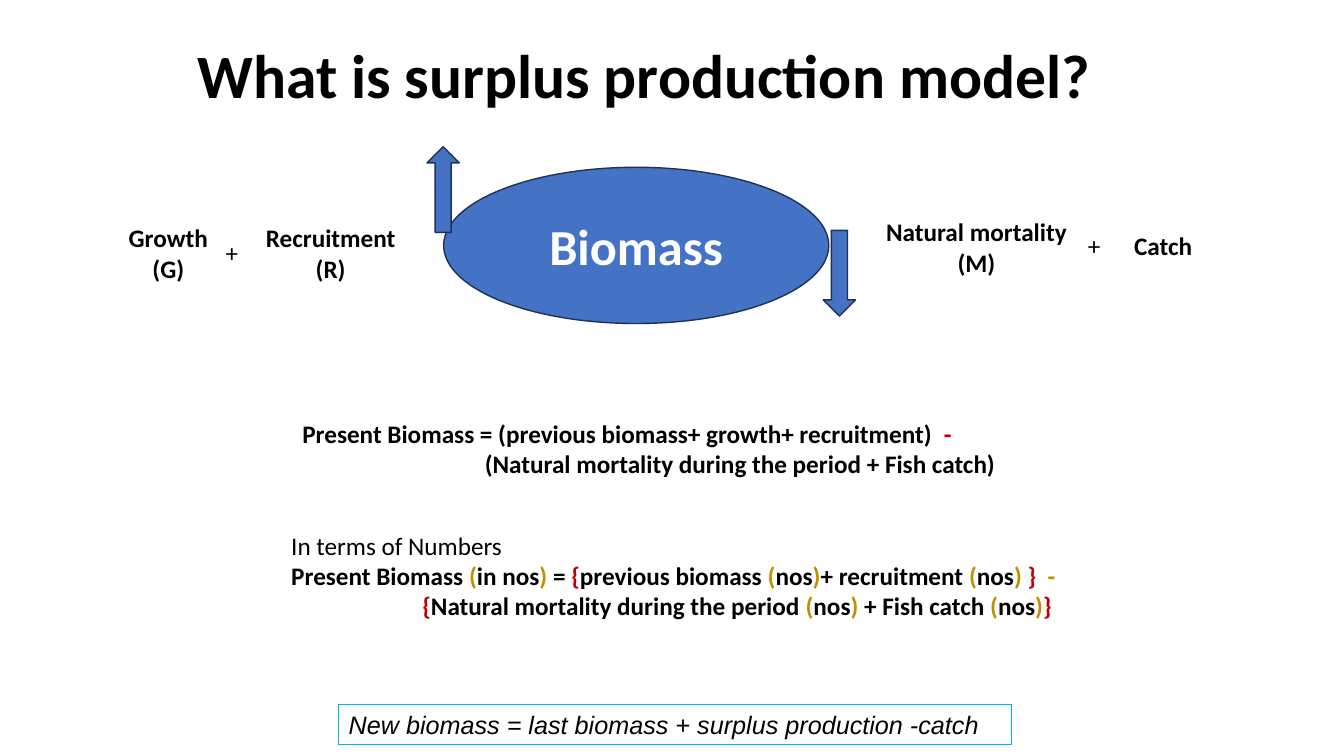
from itertools import groupby

from pptx import Presentation
from pptx.dml.color import RGBColor
from pptx.enum.shapes import MSO_SHAPE
from pptx.enum.text import MSO_ANCHOR, PP_ALIGN
from pptx.util import Inches, Pt

LEFT, CENTER = PP_ALIGN.LEFT, PP_ALIGN.CENTER
TOP, MIDDLE = MSO_ANCHOR.TOP, MSO_ANCHOR.MIDDLE
OVAL, ARROW, BOX = MSO_SHAPE.OVAL, MSO_SHAPE.RIGHT_ARROW, MSO_SHAPE.RECTANGLE

COLORS = {
    "ink": "000000",
    "white": "FFFFFF",
    "blue": "4472C4",
    "navy": "1E3256",
    "sky": "00B0F0",
    "red": "C00000",
    "gold": "BF9000",
}
MINUS_COLORS = {"-": "red"}
BRACKET_COLORS = {"{": "red", "}": "red", "(": "gold", ")": "gold", "-": "gold"}


def rgb(name):
    """Return the named palette colour."""
    return RGBColor.from_string(COLORS[name])


def write_line(paragraph, text, size=18, bold=True, italic=False, color="ink",
               font="Calibri", align=LEFT, symbol_colors=None):
    """Write one paragraph, giving listed symbols their own colour."""
    paragraph.alignment = align
    paragraph.font.name = font
    paragraph.font.size = Pt(size)
    paragraph.font.bold = bold
    paragraph.font.italic = italic
    paragraph.font.color.rgb = rgb(color)
    symbols = symbol_colors or {}
    for symbol_color, letters in groupby(text, symbols.get):
        run = paragraph.add_run()
        run.text = "".join(letters)
        if symbol_color:
            run.font.color.rgb = rgb(symbol_color)


def add_text(slide, place, lines, anchor=TOP, wrap=True, **style):
    """Add a text box with one paragraph per line and return its paragraphs."""
    frame = slide.shapes.add_textbox(*map(Inches, place)).text_frame
    frame.word_wrap = wrap
    frame.vertical_anchor = anchor
    for index, line in enumerate(lines):
        paragraph = frame.add_paragraph() if index else frame.paragraphs[0]
        write_line(paragraph, line, **style)
    return frame.paragraphs


def add_figure(slide, kind, place, fill="blue", line="navy", width=1, rotation=0):
    """Add an outlined preset shape, unfilled when fill is None."""
    figure = slide.shapes.add_shape(kind, *map(Inches, place))
    figure.shadow.inherit = False
    figure.rotation = rotation
    if fill:
        figure.fill.solid()
        figure.fill.fore_color.rgb = rgb(fill)
    else:
        figure.fill.background()
    figure.line.color.rgb = rgb(line)
    figure.line.width = Pt(width)
    return figure


def indent(paragraph, inches):
    """Indent a whole paragraph from the left."""
    paragraph._p.get_or_add_pPr().set("marL", str(Inches(inches)))


def add_biomass_diagram(slide):
    """Draw the biomass oval with its gains on the left and losses on the right."""
    biomass = add_figure(slide, OVAL, (4.4, 1.66, 3.82, 1.55))
    biomass.text_frame.vertical_anchor = MIDDLE
    write_line(biomass.text_frame.paragraphs[0], "Biomass", size=36,
               color="white", align=CENTER)

    add_figure(slide, ARROW, (3.97, 1.72, 0.85, 0.32), rotation=270)
    add_figure(slide, ARROW, (7.9, 2.55, 0.85, 0.32), rotation=90)

    add_text(slide, (1.17, 2.16, 1, 0.71), ["Growth", "(G)"], wrap=False, align=CENTER)
    add_text(slide, (2.53, 2.16, 1.5, 0.71), ["Recruitment", "(R)"], wrap=False,
             align=CENTER)
    add_text(slide, (8.58, 2.1, 2.21, 0.71), ["Natural mortality (M)"], align=CENTER)
    add_text(slide, (11.15, 2.24, 0.78, 0.4), ["Catch"], wrap=False)
    for left, top in ((2.14, 2.31), (10.69, 2.24)):
        add_text(slide, (left, top, 0.48, 0.4), ["+"], bold=False)


def add_equations(slide):
    """Write the biomass balance, in general and in numbers."""
    balance = add_text(slide, (2.9, 4.1, 8.2, 0.71), [
        "Present Biomass = (previous biomass+ growth+ recruitment)  -",
        "(Natural mortality during the period + Fish catch)",
    ], symbol_colors=MINUS_COLORS)
    indent(balance[1], 1.81)

    in_numbers = add_text(slide, (2.79, 5.21, 7.8, 1.01), [
        "In terms of Numbers",
        "Present Biomass (in nos) = {previous biomass (nos)+ recruitment (nos) }  -",
        "{Natural mortality during the period (nos) + Fish catch (nos)}",
    ], symbol_colors=BRACKET_COLORS)
    in_numbers[0].font.bold = False
    indent(in_numbers[2], 1.3)


def add_summary(slide):
    """Write the closing formula in a thin frame."""
    summary = add_figure(slide, BOX, (3.36, 6.99, 6.67, 0.4), fill=None,
                         line="sky", width=0.75)
    summary.text_frame.vertical_anchor = TOP
    write_line(summary.text_frame.paragraphs[0],
               "New biomass = last biomass + surplus production -catch",
               bold=False, italic=True, font="Arial")


def main():
    """Build and save the slide."""
    deck = Presentation()
    deck.slide_width, deck.slide_height = Inches(13.33), Inches(7.5)
    slide = deck.slides.add_slide(deck.slide_layouts[6])
    title = add_text(slide, (1.86, 0.29, 9.37, 0.97),
                     ["What is surplus production model?"], anchor=MIDDLE, size=44)
    title[0].line_spacing = 0.9
    add_biomass_diagram(slide)
    add_equations(slide)
    add_summary(slide)
    deck.save("out.pptx")


if __name__ == "__main__":
    main()
